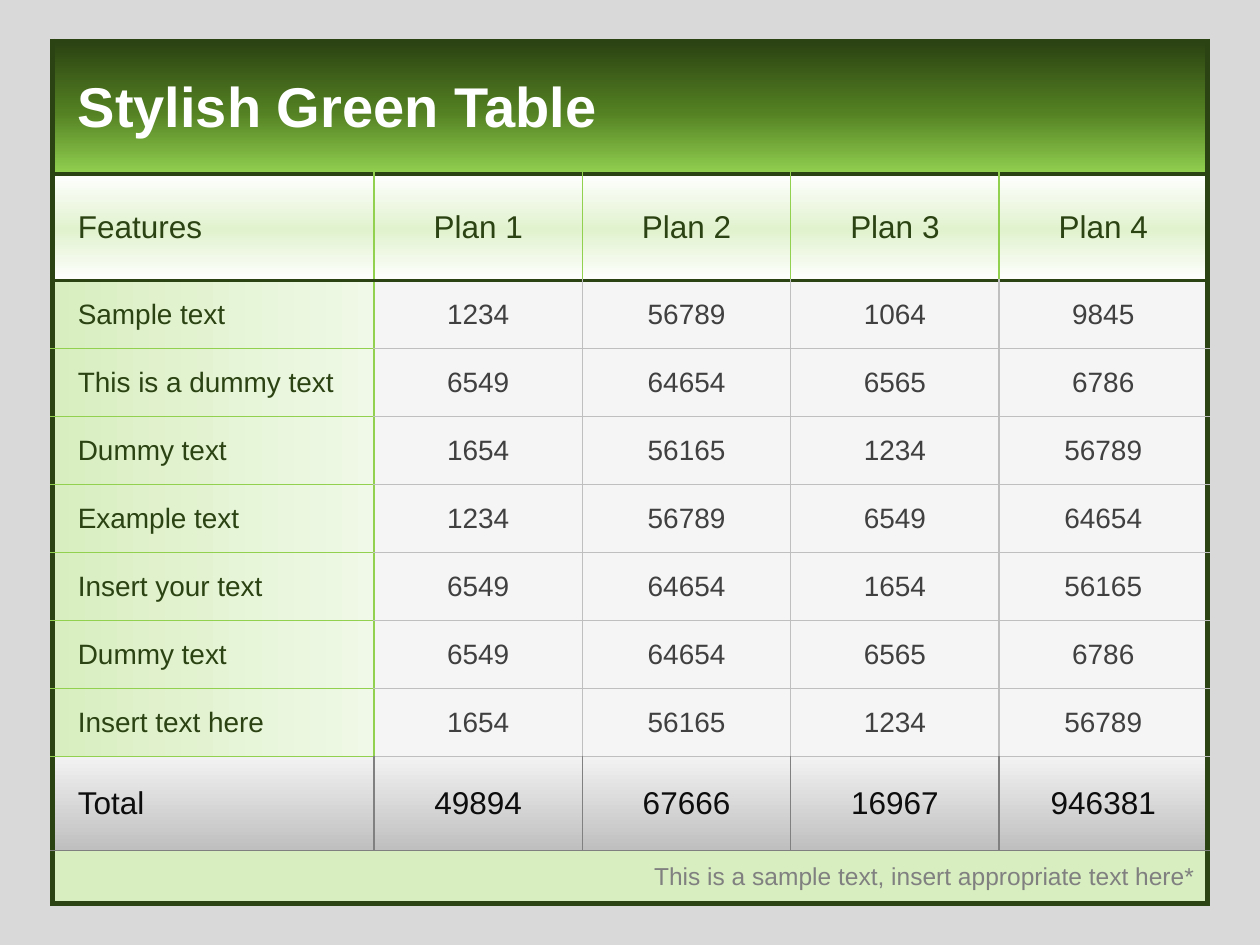
from dataclasses import dataclass
from typing import Optional

from lxml.etree import SubElement
from pptx import Presentation
from pptx.dml.color import RGBColor
from pptx.enum.text import MSO_ANCHOR, PP_ALIGN
from pptx.oxml.ns import qn
from pptx.util import Cm, Pt

DARK_GREEN = RGBColor(0x2B, 0x42, 0x12)
MID_GREEN = RGBColor(0x53, 0x80, 0x22)
BRIGHT_GREEN = RGBColor(0x92, 0xD0, 0x50)
SOFT_GREEN = RGBColor(0xE1, 0xF2, 0xCE)
PALE_GREEN = RGBColor(0xD8, 0xEE, 0xC0)
FAINT_GREEN = RGBColor(0xF0, 0xF9, 0xE7)
WHITE = RGBColor(0xFF, 0xFF, 0xFF)
OFF_WHITE = RGBColor(0xF5, 0xF5, 0xF5)
LIGHT_GREY = RGBColor(0xF2, 0xF2, 0xF2)
BACKGROUND_GREY = RGBColor(0xD9, 0xD9, 0xD9)
SILVER = RGBColor(0xBF, 0xBF, 0xBF)
MID_GREY = RGBColor(0x80, 0x80, 0x80)
CHARCOAL = RGBColor(0x40, 0x40, 0x40)
NEAR_BLACK = RGBColor(0x0D, 0x0D, 0x0D)

FONT = "Arial"
NO_STYLE = "{2D5ABB26-0587-4C30-8999-92F81FD0307C}"
LEFT, TOP = Cm(1.06), Cm(0.83)
COLUMN_WIDTHS = [Cm(6.48)] + [Cm(4.2)] * 4
LAST_COLUMN = len(COLUMN_WIDTHS) - 1


@dataclass(frozen=True)
class Border:
    color: RGBColor
    points: float = 1


@dataclass(frozen=True)
class Fill:
    stops: tuple[tuple[int, RGBColor], ...]
    angle: int = 0


@dataclass(frozen=True)
class CellStyle:
    fill: Fill
    color: RGBColor
    right: Border
    bottom: Border


@dataclass(frozen=True)
class RowStyle:
    height: Cm
    size: int
    label: CellStyle
    value: CellStyle
    bold: bool = False
    label_alignment: PP_ALIGN = PP_ALIGN.LEFT
    label_margin: Cm = Cm(0.51)


FRAME = Border(DARK_GREEN, 3)
RULE = Border(DARK_GREEN, 2.25)
GREEN_LINE = Border(BRIGHT_GREEN)
SILVER_LINE = Border(SILVER)
GREY_LINE = Border(MID_GREY)

BANNER_CELL = CellStyle(
    Fill(((0, DARK_GREEN), (53, MID_GREEN), (100, BRIGHT_GREEN)), 90), WHITE, FRAME, RULE)
HEADER_CELL = CellStyle(
    Fill(((0, WHITE), (52, SOFT_GREEN), (100, WHITE)), 90), DARK_GREEN, GREEN_LINE, RULE)
FEATURE_CELL = CellStyle(
    Fill(((0, PALE_GREEN), (100, FAINT_GREEN))), DARK_GREEN, GREEN_LINE, GREEN_LINE)
NUMBER_CELL = CellStyle(Fill(((0, OFF_WHITE),)), CHARCOAL, SILVER_LINE, SILVER_LINE)
TOTAL_CELL = CellStyle(
    Fill(((0, SILVER), (100, LIGHT_GREY)), 270), NEAR_BLACK, GREY_LINE, GREY_LINE)
FOOTNOTE_CELL = CellStyle(Fill(((0, PALE_GREEN),)), MID_GREY, FRAME, FRAME)

BANNER = RowStyle(Cm(2.68), 32, BANNER_CELL, BANNER_CELL, bold=True)
HEADER = RowStyle(Cm(2.15), 18, HEADER_CELL, HEADER_CELL)
BODY = RowStyle(Cm(1.37), 16, FEATURE_CELL, NUMBER_CELL)
TOTAL = RowStyle(Cm(1.89), 18, TOTAL_CELL, TOTAL_CELL)
FOOTNOTE = RowStyle(Cm(1.07), 14, FOOTNOTE_CELL, FOOTNOTE_CELL,
                    label_alignment=PP_ALIGN.RIGHT, label_margin=Cm(0.25))

ROWS = [
    (BANNER, ["Stylish Green Table"]),
    (HEADER, ["Features", "Plan 1", "Plan 2", "Plan 3", "Plan 4"]),
    (BODY, ["Sample text", "1234", "56789", "1064", "9845"]),
    (BODY, ["This is a dummy text", "6549", "64654", "6565", "6786"]),
    (BODY, ["Dummy text", "1654", "56165", "1234", "56789"]),
    (BODY, ["Example text", "1234", "56789", "6549", "64654"]),
    (BODY, ["Insert your text", "6549", "64654", "1654", "56165"]),
    (BODY, ["Dummy text", "6549", "64654", "6565", "6786"]),
    (BODY, ["Insert text here", "1654", "56165", "1234", "56789"]),
    (TOTAL, ["Total", "49894", "67666", "16967", "946381"]),
    (FOOTNOTE, ["This is a sample text, insert appropriate text here*"]),
]


def style_at(row: int, column: int) -> CellStyle:
    row_style = ROWS[row][0]
    return row_style.value if column else row_style.label


def add_color(parent, color: RGBColor) -> None:
    SubElement(parent, qn("a:srgbClr"), val=str(color))


def add_border(properties, side: str, border: Optional[Border]) -> None:
    if border is None:
        return
    line = SubElement(properties, qn(f"a:ln{side}"), w=str(Pt(border.points)))
    add_color(SubElement(line, qn("a:solidFill")), border.color)


def add_fill(properties, fill: Fill) -> None:
    if len(fill.stops) == 1:
        add_color(SubElement(properties, qn("a:solidFill")), fill.stops[0][1])
        return
    gradient = SubElement(properties, qn("a:gradFill"), rotWithShape="1")
    stop_list = SubElement(gradient, qn("a:gsLst"))
    for position, color in fill.stops:
        add_color(SubElement(stop_list, qn("a:gs"), pos=str(position * 1000)), color)
    SubElement(gradient, qn("a:lin"), ang=str(fill.angle * 60000), scaled="0")


def decorate_cell(cell, row: int, column: int) -> None:
    style = style_at(row, column)
    left = style_at(row, column - 1).right if column else FRAME
    right = FRAME if column == LAST_COLUMN else style.right
    if cell.is_spanned:
        left = None
        right = FRAME if column == LAST_COLUMN else None
    top = style_at(row - 1, column).bottom if row else FRAME
    properties = cell._tc.get_or_add_tcPr()
    for side, border in zip("LRTB", (left, right, top, style.bottom)):
        add_border(properties, side, border)
    add_fill(properties, style.fill)


def write_cell(cell, text: str, row: int, column: int) -> None:
    row_style = ROWS[row][0]
    cell.vertical_anchor = MSO_ANCHOR.MIDDLE
    if column == 0:
        cell.margin_left = row_style.label_margin
    paragraph = cell.text_frame.paragraphs[0]
    paragraph.alignment = PP_ALIGN.CENTER if column else row_style.label_alignment
    run = paragraph.add_run()
    run.text = text
    run.font.name = FONT
    run.font.size = Pt(row_style.size)
    run.font.bold = row_style.bold
    run.font.color.rgb = style_at(row, column).color


def add_pricing_table(slide) -> None:
    height = sum(row_style.height for row_style, _ in ROWS)
    shape = slide.shapes.add_table(
        len(ROWS), len(COLUMN_WIDTHS), LEFT, TOP, sum(COLUMN_WIDTHS), height)
    table = shape.table
    table.first_row = False
    table.horz_banding = False
    table._tbl.tblPr.find(qn("a:tableStyleId")).text = NO_STYLE
    for column, width in zip(table.columns, COLUMN_WIDTHS):
        column.width = width
    for row, (row_style, texts) in enumerate(ROWS):
        table.rows[row].height = row_style.height
        if len(texts) == 1:
            table.cell(row, 0).merge(table.cell(row, LAST_COLUMN))
        for column in range(len(COLUMN_WIDTHS)):
            decorate_cell(table.cell(row, column), row, column)
        for column, text in enumerate(texts):
            write_cell(table.cell(row, column), text, row, column)


def main() -> None:
    presentation = Presentation()
    presentation.slide_width = Cm(25.4)
    presentation.slide_height = Cm(19.05)
    slide = presentation.slides.add_slide(presentation.slide_layouts[6])
    slide.background.fill.solid()
    slide.background.fill.fore_color.rgb = BACKGROUND_GREY
    add_pricing_table(slide)
    presentation.save("out.pptx")


if __name__ == "__main__":
    main()
